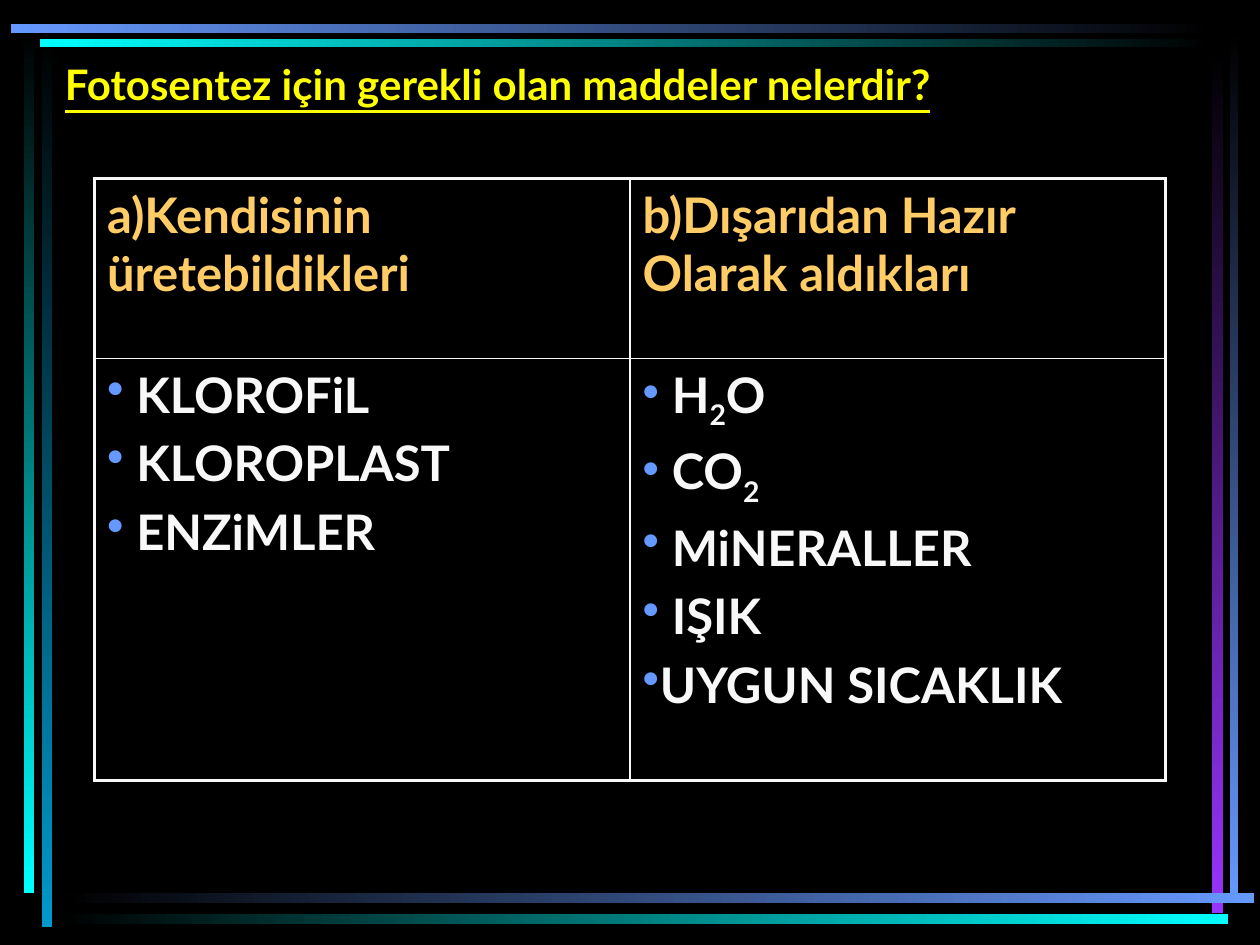
from lxml import etree
from pptx import Presentation
from pptx.dml.color import RGBColor
from pptx.enum.shapes import MSO_SHAPE
from pptx.oxml.ns import qn
from pptx.util import Pt

RECT = MSO_SHAPE.RECTANGLE
FONT = "Lato"
C = {
    "black": "000000", "title": "FFFF00", "header": "FFCC66", "text": "F8F8F8",
    "blue": "6699FF", "cyan": "00FFFF", "teal": "0099CC", "purple": "9933FF",
}

TITLE = "Fotosentez için gerekli olan maddeler nelerdir?"
HEADERS = ["a)Kendisinin üretebildikleri", "b)Dışarıdan Hazır Olarak aldıkları"]
# Each item is a tuple of runs; every second run is a subscript.
ITEMS = [
    [(" KLOROFiL",), (" KLOROPLAST",), (" ENZiMLER",)],
    [(" H", "2", "O"), (" CO", "2"), (" MiNERALLER",), (" IŞIK",), ("UYGUN SICAKLIK",)],
]

# left, top, width, height, first colour, last colour
BARS = [
    (23.8, 20.2, 5.8, 509.8, "black", "teal"),
    (13.7, 18, 5.8, 492.5, "black", "cyan"),
    (702.7, 17.3, 5, 499, "black", "blue"),
    (692.6, 30.2, 6.2, 491.8, "black", "purple"),
    (32.4, 510.2, 684, 5.8, "black", "blue"),
    (32.4, 522, 669.6, 5.8, "black", "cyan"),
    (23, 22.4, 671, 4.3, "cyan", "black"),
    (6.1, 13.7, 688.3, 5, "blue", "black"),
]
COL_W = 306
ROW_H = [103, 241]
OUTER, INNER = 2.25, 1


def rgb(name):
    return RGBColor.from_string(C[name])


def style(r, size, color):
    r.font.name = FONT
    r.font.size = Pt(size)
    r.font.bold = True
    r.font.color.rgb = rgb(color)


def add_bar(shapes, left, top, width, height, first, last):
    s = shapes.add_shape(RECT, Pt(left), Pt(top), Pt(width), Pt(height))
    s.shadow.inherit = False
    s.line.fill.background()
    s.fill.gradient()
    s.fill.gradient_angle = 270 if height > width else 0
    for stop, name in zip(s.fill.gradient_stops, (first, last)):
        stop.color.rgb = rgb(name)


def add_borders(cell, row, col):
    """Thick lines on the outside of the 2 x 2 table, thin lines inside."""
    tcPr = cell._tc.get_or_add_tcPr()
    outside = {"L": col == 0, "R": col == 1, "T": row == 0, "B": row == 1}
    for side, is_outer in outside.items():
        ln = etree.SubElement(tcPr, qn(f"a:ln{side}"))
        ln.set("w", str(Pt(OUTER if is_outer else INNER)))
        fill = etree.SubElement(ln, qn("a:solidFill"))
        etree.SubElement(fill, qn("a:srgbClr")).set("val", C["text"])


def add_bullet(p):
    pPr = p._p.get_or_add_pPr()
    pPr.set("marL", "0")
    pPr.set("indent", "0")
    color = etree.SubElement(pPr, qn("a:buClr"))
    etree.SubElement(color, qn("a:srgbClr")).set("val", C["blue"])
    etree.SubElement(pPr, qn("a:buChar")).set("char", "•")


def fill_list(tf, items):
    for i, runs in enumerate(items):
        p = tf.add_paragraph() if i else tf.paragraphs[0]
        p.space_before = Pt(5.6 if i else 0)
        add_bullet(p)
        for j, text in enumerate(runs):
            r = p.add_run()
            r.text = text
            style(r, 28, "text")
            if j % 2:
                r._r.get_or_add_rPr().set("baseline", "-25000")


prs = Presentation()
prs.slide_width, prs.slide_height = Pt(720), Pt(540)
slide = prs.slides.add_slide(prs.slide_layouts[6])
slide.background.fill.solid()
slide.background.fill.fore_color.rgb = rgb("black")

for bar in BARS:
    add_bar(slide.shapes, *bar)

title = slide.shapes.add_textbox(Pt(30), Pt(30), Pt(630), Pt(66))
title.text_frame.word_wrap = True
title.text_frame.text = TITLE
title_run = title.text_frame.paragraphs[0].runs[0]
style(title_run, 24, "title")
title_run.font.underline = True

table = slide.shapes.add_table(2, 2, Pt(54), Pt(102), Pt(2 * COL_W), Pt(sum(ROW_H))).table
table.first_row = table.horz_banding = False
for row, height in enumerate(ROW_H):
    table.rows[row].height = Pt(height)
for col, (header, items) in enumerate(zip(HEADERS, ITEMS)):
    table.columns[col].width = Pt(COL_W)
    for row in range(2):
        add_borders(table.cell(row, col), row, col)
        table.cell(row, col).fill.background()
    tf = table.cell(0, col).text_frame
    tf.text = header
    style(tf.paragraphs[0].runs[0], 28, "header")
    fill_list(table.cell(1, col).text_frame, items)

prs.save("out.pptx")
